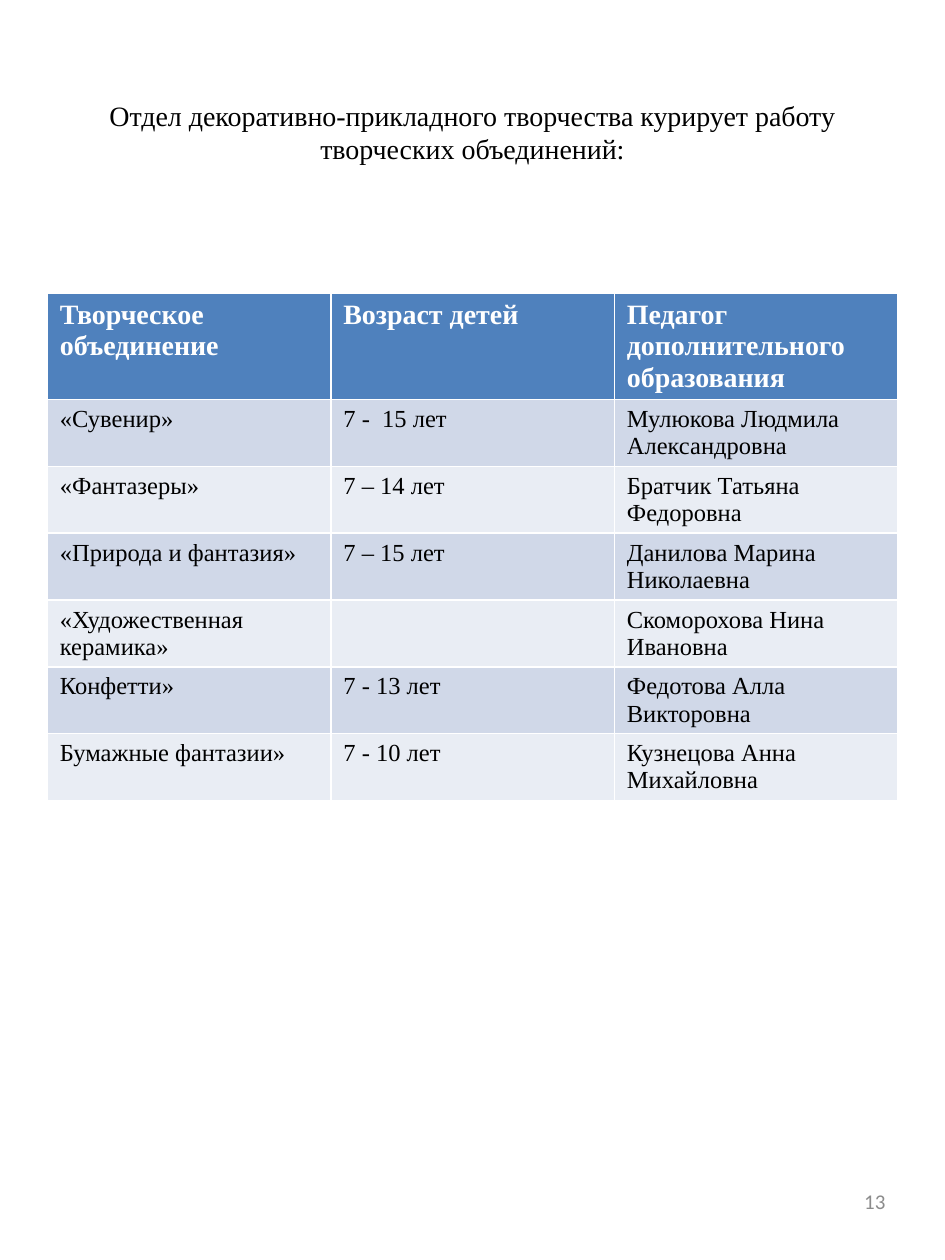
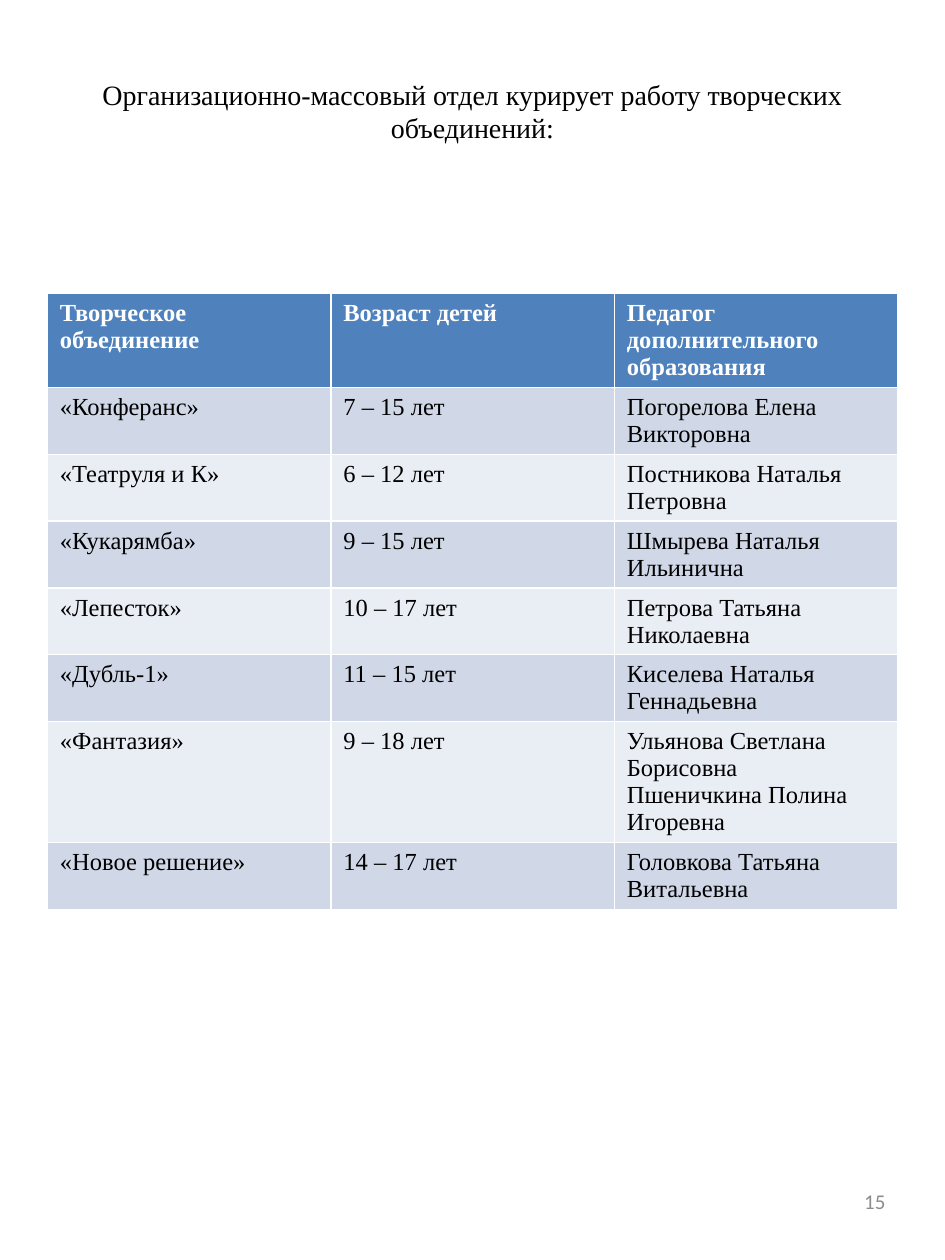
"""Builds two slides listing the creative clubs supervised by each department."""
from pptx import Presentation
from pptx.dml.color import RGBColor
from pptx.enum.text import MSO_ANCHOR, MSO_AUTO_SIZE, PP_ALIGN
from pptx.util import Inches, Pt

CENTER, RIGHT = PP_ALIGN.CENTER, PP_ALIGN.RIGHT
MIDDLE = MSO_ANCHOR.MIDDLE
NO_AUTOFIT = MSO_AUTO_SIZE.NONE
SERIF, SANS = "Times New Roman", "Calibri"
BLACK, WHITE, GRAY = "000000", "FFFFFF", "8C8C8C"
HEADER_BLUE = "4F81BD"
BANDS = ["D0D8E8", "E9EDF4"]

PAGE_WIDTH, PAGE_HEIGHT = Inches(7.5), Inches(10)
MARGIN = int(PAGE_WIDTH * 0.05)
CONTENT_WIDTH = PAGE_WIDTH - 2 * MARGIN
TITLE_TOP = int(PAGE_HEIGHT * 0.04)
TABLE_TOP = int(PAGE_HEIGHT * 0.233)
ROW_HEIGHT = Inches(0.41)
NUMBER_WIDTH, NUMBER_HEIGHT = Inches(1.75), Inches(0.53)
NUMBER_TOP = int(PAGE_HEIGHT * 0.927)

HEADINGS = ["Творческое объединение", "Возраст детей", "Педагог дополнительного образования"]

DEPARTMENTS = [
    {
        "title": "Отдел декоративно-прикладного творчества курирует работу творческих объединений:",
        "title_height": 1.29,
        "title_bottom_inset": 0.05,
        "heading_size": 16,
        "number": "13",
        "clubs": [
            ["«Сувенир»", "7 -  15 лет", "Мулюкова Людмила Александровна"],
            ["«Фантазеры»", "7 – 14 лет", "Братчик Татьяна Федоровна"],
            ["«Природа и фантазия»", "7 – 15 лет", "Данилова Марина Николаевна"],
            ["«Художественная керамика»", "", "Скоморохова Нина Ивановна"],
            ["Конфетти»", "7 - 13 лет", "Федотова Алла Викторовна"],
            ["Бумажные фантазии»", "7 - 10 лет", "Кузнецова Анна Михайловна"],
        ],
    },
    {
        "title": "Организационно-массовый отдел курирует работу творческих объединений:",
        "title_height": 1.67,
        "title_bottom_inset": 0.76,
        "heading_size": 14,
        "number": "15",
        "clubs": [
            ["«Конферанс»", "7 – 15 лет", "Погорелова Елена Викторовна"],
            ["«Театруля и К»", "6 – 12 лет", "Постникова Наталья Петровна"],
            ["«Кукарямба»", "9 – 15 лет", "Шмырева Наталья Ильинична"],
            ["«Лепесток»", "10 – 17 лет", "Петрова Татьяна Николаевна"],
            ["«Дубль-1»", "11 – 15 лет", "Киселева Наталья Геннадьевна"],
            ["«Фантазия»", "9 – 18 лет", "Ульянова Светлана Борисовна\nПшеничкина Полина Игоревна"],
            ["«Новое решение»", "14 – 17 лет", "Головкова Татьяна Витальевна"],
        ],
    },
]


def color(hex_string):
    return RGBColor.from_string(hex_string)


def write(frame, text, font_name, size, hex_string, align=None, bold=False):
    frame.text = text
    for para in frame.paragraphs:
        para.alignment = align
        para.font.size = Pt(size)
        for span in para.runs:
            span.font.name = font_name
            span.font.size = Pt(size)
            span.font.bold = bold
            span.font.color.rgb = color(hex_string)


deck = Presentation()
deck.slide_width, deck.slide_height = PAGE_WIDTH, PAGE_HEIGHT
title_only = deck.slide_layouts[5]

for department in DEPARTMENTS:
    page = deck.slides.add_slide(title_only)

    title = page.shapes.title
    title.left, title.top = MARGIN, TITLE_TOP
    title.width, title.height = CONTENT_WIDTH, Inches(department["title_height"])
    title.text_frame.auto_size = NO_AUTOFIT
    title.text_frame.vertical_anchor = MIDDLE
    title.text_frame.margin_bottom = Inches(department["title_bottom_inset"])
    write(title.text_frame, department["title"], SERIF, 16, BLACK, CENTER)

    rows = [HEADINGS] + department["clubs"]
    table = page.shapes.add_table(
        len(rows), len(HEADINGS), MARGIN, TABLE_TOP, CONTENT_WIDTH, ROW_HEIGHT * len(rows)
    ).table
    for row_index, row in enumerate(rows):
        is_header = row_index == 0
        fill = HEADER_BLUE if is_header else BANDS[(row_index - 1) % 2]
        size = department["heading_size"] if is_header else 14
        for column_index, text in enumerate(row):
            cell = table.cell(row_index, column_index)
            cell.fill.solid()
            cell.fill.fore_color.rgb = color(fill)
            write(cell.text_frame, text, SERIF, size, WHITE if is_header else BLACK, bold=is_header)

    box = page.shapes.add_textbox(
        PAGE_WIDTH - MARGIN - NUMBER_WIDTH, NUMBER_TOP, NUMBER_WIDTH, NUMBER_HEIGHT
    )
    box.text_frame.word_wrap = True
    box.text_frame.vertical_anchor = MIDDLE
    write(box.text_frame, department["number"], SANS, 12, GRAY, RIGHT)

deck.save("out.pptx")
